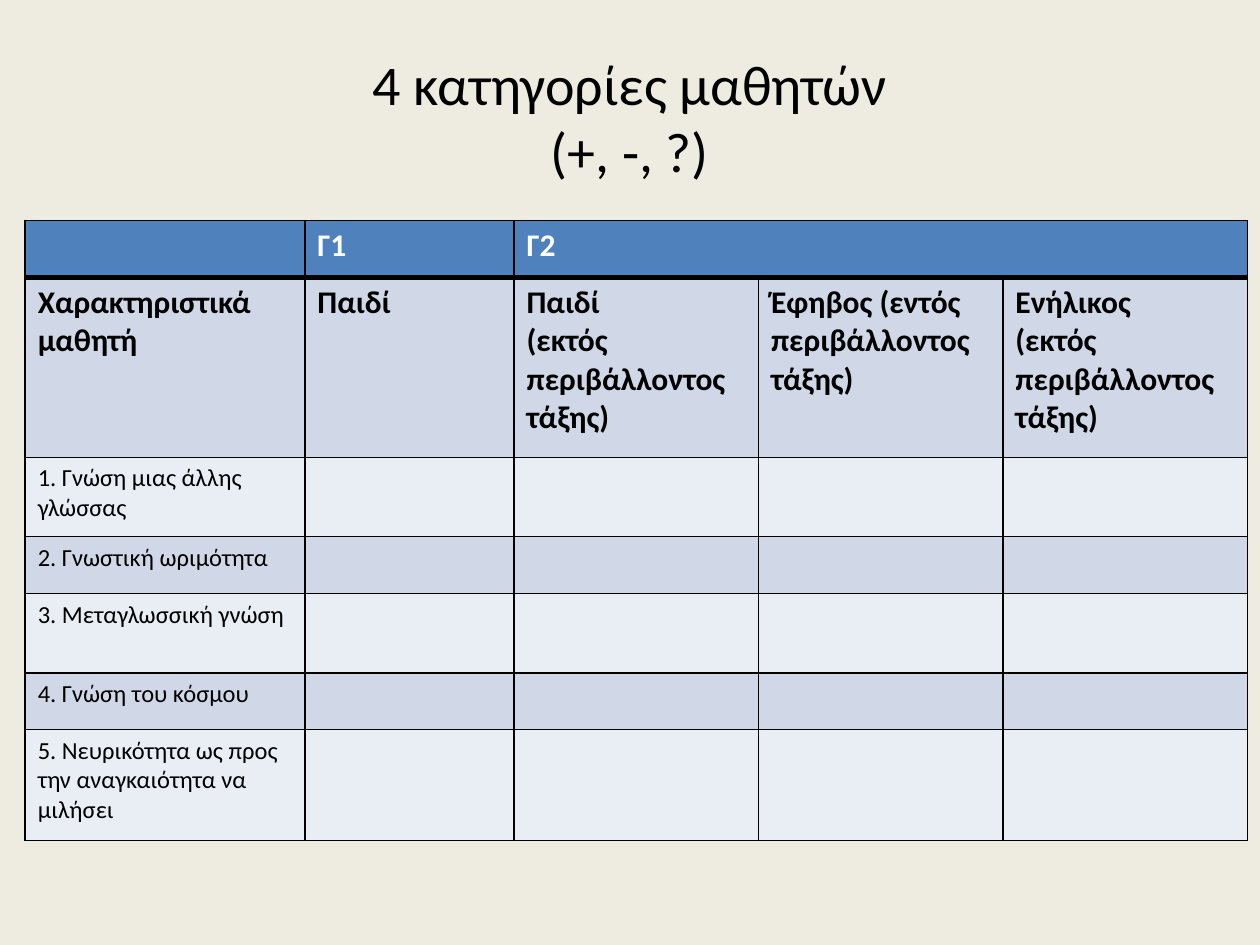
"""Build a slide with a table of four learner categories."""
from lxml.etree import SubElement
from pptx import Presentation
from pptx.dml.color import RGBColor
from pptx.enum.text import MSO_ANCHOR, PP_ALIGN
from pptx.oxml.ns import qn
from pptx.util import Inches, Pt

TITLE = "4 κατηγορίες μαθητών\v(+, -, ?)"
HEADER = ["", "Γ1", "Γ2", "", ""]
CATEGORIES = [
    "Χαρακτηριστικά\nμαθητή",
    "Παιδί",
    "Παιδί\n(εκτός περιβάλλοντος τάξης)",
    "Έφηβος (εντός περιβάλλοντος τάξης)",
    "Ενήλικος\n(εκτός περιβάλλοντος τάξης)",
]
TRAITS = [
    "1. Γνώση μιας άλλης γλώσσας",
    "2. Γνωστική ωριμότητα",
    "3. Μεταγλωσσική γνώση",
    "4. Γνώση του κόσμου",
    "5. Νευρικότητα ως προς την αναγκαιότητα να μιλήσει",
]
ROWS = [HEADER, CATEGORIES] + [[trait, "", "", "", ""] for trait in TRAITS]
COL_WIDTHS = [2.22, 1.66, 1.94, 1.94, 1.94]
ROW_HEIGHTS = [0.45, 1.43, 0.63, 0.45, 0.63, 0.45, 0.88]

BACKGROUND = RGBColor(0xEE, 0xEC, 0xE1)
BLACK = RGBColor(0, 0, 0)
WHITE = RGBColor(0xFF, 0xFF, 0xFF)
BLUE = RGBColor(0x4F, 0x81, 0xBD)
BANDS = [RGBColor(0xE9, 0xED, 0xF4), RGBColor(0xD0, 0xD8, 0xE8)]


def write(tf, text, size, color=BLACK, bold=False, align=PP_ALIGN.LEFT):
    tf.text = text
    for p in tf.paragraphs:
        p.alignment = align
        for font in [p.font] + [r.font for r in p.runs]:
            font.name = "Calibri"
            font.size = Pt(size)
            font.bold = bold
            font.color.rgb = color


def add_borders(cell, **widths):
    tc_pr = cell._tc.get_or_add_tcPr()
    for side in "LRTB":
        ln = SubElement(tc_pr, qn(f"a:ln{side}"), w=str(Pt(widths.get(side, 1))))
        fill = SubElement(ln, qn("a:solidFill"))
        SubElement(fill, qn("a:srgbClr"), val=str(BLACK))


def add_learner_table(slide):
    table = slide.shapes.add_table(
        len(ROWS), len(COL_WIDTHS), Inches(0.2), Inches(1.75),
        Inches(sum(COL_WIDTHS)), Inches(sum(ROW_HEIGHTS))).table
    for column, width in zip(table.columns, COL_WIDTHS):
        column.width = Inches(width)
    for i, (row, height) in enumerate(zip(ROWS, ROW_HEIGHTS)):
        table.rows[i].height = Inches(height)
        for j, text in enumerate(row):
            cell = table.cell(i, j)
            write(cell.text_frame, text, 18 if i < 2 else 14,
                  WHITE if i == 0 else BLACK, i < 2)
            add_borders(cell, T=3 if i == 1 else 1, B=3 if i == 0 else 1)
            cell.fill.solid()
            cell.fill.fore_color.rgb = BLUE if i == 0 else BANDS[i % 2]
    table.cell(0, 2).merge(table.cell(0, 4))


def main():
    prs = Presentation()
    prs.slide_width, prs.slide_height = Inches(10), Inches(7.5)
    slide = prs.slides.add_slide(prs.slide_layouts[5])
    slide.background.fill.solid()
    slide.background.fill.fore_color.rgb = BACKGROUND

    title = slide.shapes.title
    title.left, title.top = Inches(0.5), Inches(0.3)
    title.width, title.height = Inches(9), Inches(1.25)
    title.text_frame.vertical_anchor = MSO_ANCHOR.MIDDLE
    write(title.text_frame, TITLE, 32, align=PP_ALIGN.CENTER)

    add_learner_table(slide)
    prs.save("out.pptx")


if __name__ == "__main__":
    main()
